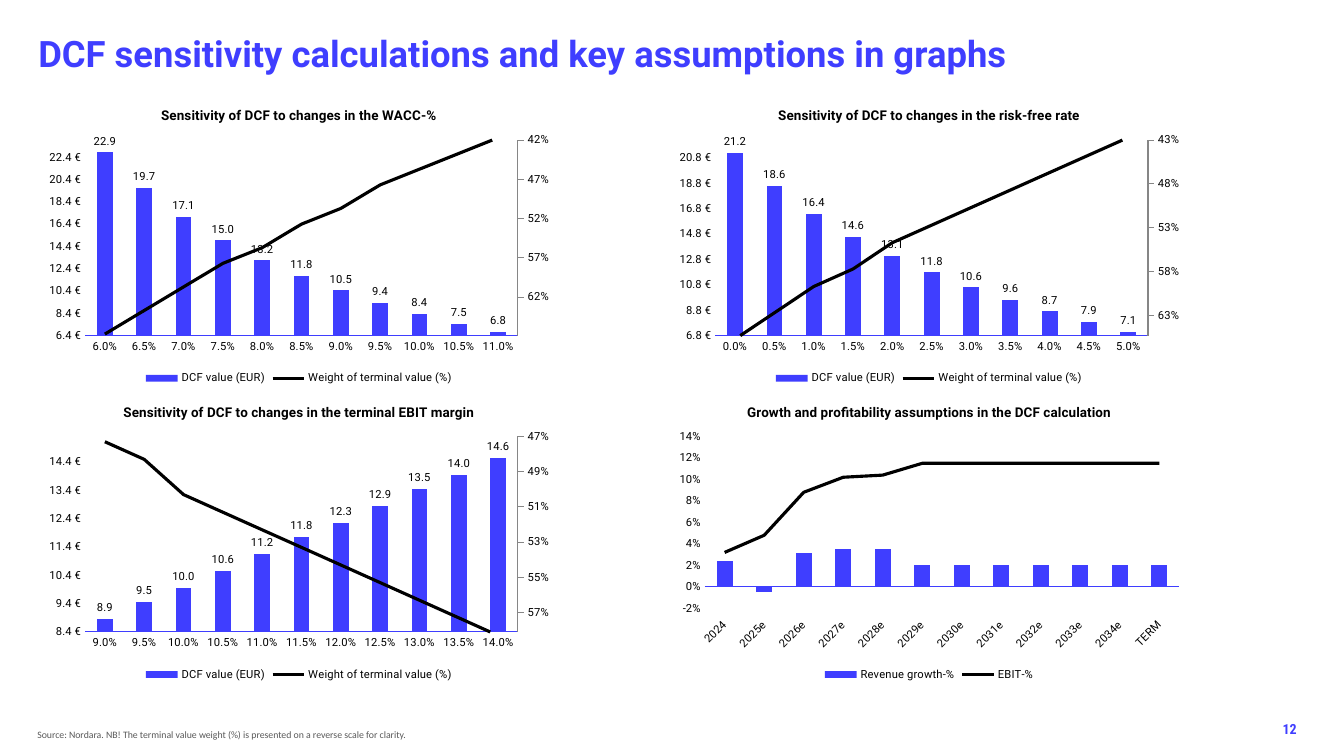
"""Build a slide with four charts of DCF sensitivities and assumptions."""
from lxml import etree
from pptx import Presentation
from pptx.chart.data import CategoryChartData
from pptx.dml.color import RGBColor
from pptx.enum.chart import (XL_CHART_TYPE, XL_LABEL_POSITION, XL_LEGEND_POSITION,
                             XL_MARKER_STYLE, XL_TICK_LABEL_POSITION, XL_TICK_MARK)
from pptx.enum.text import MSO_ANCHOR, PP_ALIGN
from pptx.util import Inches, Pt

CLUSTERED = XL_CHART_TYPE.COLUMN_CLUSTERED
STACKED = XL_CHART_TYPE.COLUMN_STACKED
OUTSIDE_END = XL_LABEL_POSITION.OUTSIDE_END
BOTTOM = XL_LEGEND_POSITION.BOTTOM
NO_MARKER = XL_MARKER_STYLE.NONE
LOW = XL_TICK_LABEL_POSITION.LOW
NO_TICK = XL_TICK_MARK.NONE
TOP, MIDDLE = MSO_ANCHOR.TOP, MSO_ANCHOR.MIDDLE
LEFT, RIGHT = PP_ALIGN.LEFT, PP_ALIGN.RIGHT

C = "http://schemas.openxmlformats.org/drawingml/2006/chart"
BLUE, BLACK, GRAY, AXIS_GRAY = "3F3EFF", "000000", "595959", "868686"
RIGHT_IDS = ("50010", "50020")


def rgb(value):
    return RGBColor.from_string(value)


def add(parent, tag, val=None):
    """Append a chart element and return it."""
    el = etree.SubElement(parent, f"{{{C}}}{tag}")
    if val is not None:
        el.set("val", str(val))
    return el


class Deck:
    """Holds the style and the current slide."""

    font = "Roboto"

    def __init__(self):
        self.prs = Presentation()
        self.prs.slide_width, self.prs.slide_height = Inches(13.33), Inches(7.5)
        self.s = self.prs.slides.add_slide(self.prs.slide_layouts[6])

    def text(self, box, text, size, color, font=font, bold=False,
             align=LEFT, anchor=TOP, left_inset=0, spacing=0.9):
        tf = self.s.shapes.add_textbox(*map(Inches, box)).text_frame
        tf.word_wrap = True
        tf.vertical_anchor = anchor
        tf.margin_left = Inches(left_inset)
        tf.text = text
        p = tf.paragraphs[0]
        p.alignment, p.line_spacing = align, spacing
        f = p.runs[0].font
        f.size, f.name, f.bold = Pt(size), font, bold
        f.color.rgb = rgb(color)

    def combo(self, kind, box, layout, title, cats, bars, line, left, left_format):
        """Add columns with a line drawn on the same axes."""
        data = CategoryChartData()
        data.categories = cats
        for name, values in (bars, line):
            data.add_series(name, values)
        chart = self.s.shapes.add_chart(kind, *map(Inches, box), data).chart
        chart.font.size, chart.font.name = Pt(8), self.font
        chart.font.color.rgb = rgb(BLACK)
        chart.has_title = True
        tf = chart.chart_title.text_frame
        tf.text = title
        f = tf.paragraphs[0].runs[0].font
        f.size, f.name, f.bold = Pt(9.6), self.font, True
        f.color.rgb = rgb(BLACK)
        chart.has_legend = True
        chart.legend.position = BOTTOM
        chart.legend.include_in_layout = False
        self.line_plot(chart)
        self.layout(chart, layout)
        self.axes(chart, left, left_format)
        return chart

    def line_plot(self, chart):
        """Move the second series from the columns to a line plot."""
        bar = chart._chartSpace.xpath("//c:barChart")[0]
        ser = bar.findall(f"{{{C}}}ser")[1]
        for el in ser.findall(f"{{{C}}}invertIfNegative"):
            ser.remove(el)
        plot = add(bar.getparent(), "lineChart")
        add(plot, "grouping", "standard")
        add(plot, "varyColors", 0)
        plot.append(ser)
        add(plot, "marker", 1)
        for el in bar.findall(f"{{{C}}}axId"):
            add(plot, "axId", el.get("val"))
        bar.addnext(plot)
        columns, lines = chart.plots
        columns.vary_by_categories = False
        columns.gap_width = 150
        fill = columns.series[0].format.fill
        fill.solid()
        fill.fore_color.rgb = rgb(BLUE)
        series = lines.series[0]
        series.smooth = False
        series.marker.style = NO_MARKER
        series.format.line.width = Pt(2.25)
        series.format.line.color.rgb = rgb(BLACK)

    def layout(self, chart, fractions):
        area = chart._chartSpace.xpath("//c:plotArea")[0]
        for el in area.findall(f"{{{C}}}layout"):
            area.remove(el)
        layout = add(area, "layout")
        manual = add(layout, "manualLayout")
        add(manual, "layoutTarget", "inner")
        for tag in ("xMode", "yMode"):
            add(manual, tag, "edge")
        for tag, val in zip("xywh", fractions):
            add(manual, tag, val)
        area.insert(0, layout)

    def axes(self, chart, left, left_format):
        cat, val = chart.category_axis, chart.value_axis
        for axis in (cat, val):
            axis.major_tick_mark = axis.minor_tick_mark = NO_TICK
            axis.has_major_gridlines = False
        cat.format.line.color.rgb = rgb(BLUE)
        cat.format.line.width = Pt(0.75)
        val.format.line.fill.background()
        val.minimum_scale, val.maximum_scale, val.major_unit = left
        val.tick_labels.number_format = left_format
        val.tick_labels.number_format_is_linked = False

    def right_axis(self, chart, low, high, step):
        """Put the line on a reversed percent axis at the right."""
        area = chart._chartSpace.xpath("//c:plotArea")[0]
        for el, axis_id in zip(area.xpath("c:lineChart/c:axId"), RIGHT_IDS):
            el.set("val", axis_id)
        last = area.xpath("c:valAx")[-1]
        for tag, own, other in (("valAx", *RIGHT_IDS[::-1]), ("catAx", *RIGHT_IDS)):
            axis = add(area, tag)
            is_val = tag == "valAx"
            add(axis, "axId", own)
            scaling = add(axis, "scaling")
            add(scaling, "orientation", "maxMin" if is_val else "minMax")
            if is_val:
                add(scaling, "max", high)
                add(scaling, "min", low)
            add(axis, "delete", 0 if is_val else 1)
            add(axis, "axPos", "r" if is_val else "b")
            if is_val:
                fmt = add(axis, "numFmt")
                fmt.set("formatCode", "0%")
                fmt.set("sourceLinked", "0")
            add(axis, "majorTickMark", "out")
            add(axis, "minorTickMark", "none")
            add(axis, "tickLblPos", "nextTo")
            if is_val:
                a = "http://schemas.openxmlformats.org/drawingml/2006/main"
                ln = etree.SubElement(add(axis, "spPr"), f"{{{a}}}ln", w=str(Pt(0.75)))
                fill = etree.SubElement(ln, f"{{{a}}}solidFill")
                etree.SubElement(fill, f"{{{a}}}srgbClr", val=AXIS_GRAY)
            add(axis, "crossAx", other)
            add(axis, "crosses", "max" if is_val else "autoZero")
            if is_val:
                add(axis, "majorUnit", step)
            last.addnext(axis)
            last = axis

    def sensitivity(self, box, subject, start, values, weights, left, right):
        cats = [f"{start + i / 2:.1f}%" for i in range(len(values))]
        chart = self.combo(CLUSTERED, box, (0.09, 0.16, 0.83, 0.66),
                           f"Sensitivity of DCF to changes in the {subject}", cats,
                           ("DCF value (EUR)", values),
                           ("Weight of terminal value (%)", [w / 100 for w in weights]),
                           left, '#,##0.0\\ "€"')
        self.right_axis(chart, *right)
        labels = chart.plots[0].series[0].data_labels
        labels.show_value = True
        labels.position = OUTSIDE_END
        labels.number_format, labels.number_format_is_linked = "#,##0.0", False

    def assumptions(self, box, cats, growth, margin):
        chart = self.combo(STACKED, box, (0.07, 0.16, 0.91, 0.58),
                           "Growth and profitability assumptions in the DCF calculation",
                           cats, ("Revenue growth-%", growth), ("EBIT-%", margin),
                           (-0.02, 0.14, 0.02), "0%")
        chart.plots[0].overlap = 100
        labels = chart.category_axis.tick_labels
        chart.category_axis.tick_label_position = LOW
        labels.font.size = Pt(8)
        chart._chartSpace.xpath("//c:catAx/c:txPr/a:bodyPr")[0].set("rot", "-2700000")


def main():
    deck = Deck()
    deck.text((0.38, 0.31, 11.5, 0.49),
              "DCF sensitivity calculations and key assumptions in graphs", 26, BLUE, bold=True)
    wacc, rate, ebit, growth = [(x, y, 5.17, 2.94) for y in (0.92, 3.86) for x in (0.38, 6.63)]
    deck.sensitivity(wacc, "WACC-%", 6,
                     [22.9, 19.7, 17.1, 15, 13.2, 11.8, 10.5, 9.4, 8.4, 7.5, 6.8],
                     [67, 64, 61, 58, 56, 53, 51, 48, 46, 44, 42],
                     (6.44, 23.99, 2), (0.423, 0.672, 0.05))
    deck.sensitivity(rate, "risk-free rate", 0,
                     [21.2, 18.6, 16.4, 14.6, 13.1, 11.8, 10.6, 9.6, 8.7, 7.9, 7.1],
                     [66, 63, 60, 58, 55, 53, 51, 49, 47, 45, 43],
                     (6.79, 22.22, 2), (0.433, 0.656, 0.05))
    deck.sensitivity(ebit, "terminal EBIT margin", 9,
                     [8.9, 9.5, 10, 10.6, 11.2, 11.8, 12.3, 12.9, 13.5, 14, 14.6],
                     [47, 48, 50, 51, 52, 53, 54, 55, 56, 57, 58],
                     (8.44, 15.35, 1), (0.467, 0.578, 0.02))
    years = ["2024"] + [f"{year}e" for year in range(2025, 2035)] + ["TERM"]
    deck.assumptions(growth, years,
                     [0.024, -0.005, 0.031, 0.035, 0.035] + [0.02] * 7,
                     [0.032, 0.048, 0.088, 0.102, 0.104] + [0.115] * 7)
    deck.text((0.37, 7.1, 8.28, 0.39),
              "Source: Nordara. NB! The terminal value weight (%) is presented on a reverse "
              "scale for clarity.", 7, GRAY, font="Calibri", anchor=MIDDLE)
    deck.text((9.96, 7.1, 3, 0.4), "12", 10, BLUE, font="Roboto Condensed", bold=True,
              align=RIGHT, left_inset=0.1, spacing=1.0)
    deck.prs.save("out.pptx")


if __name__ == "__main__":
    main()
